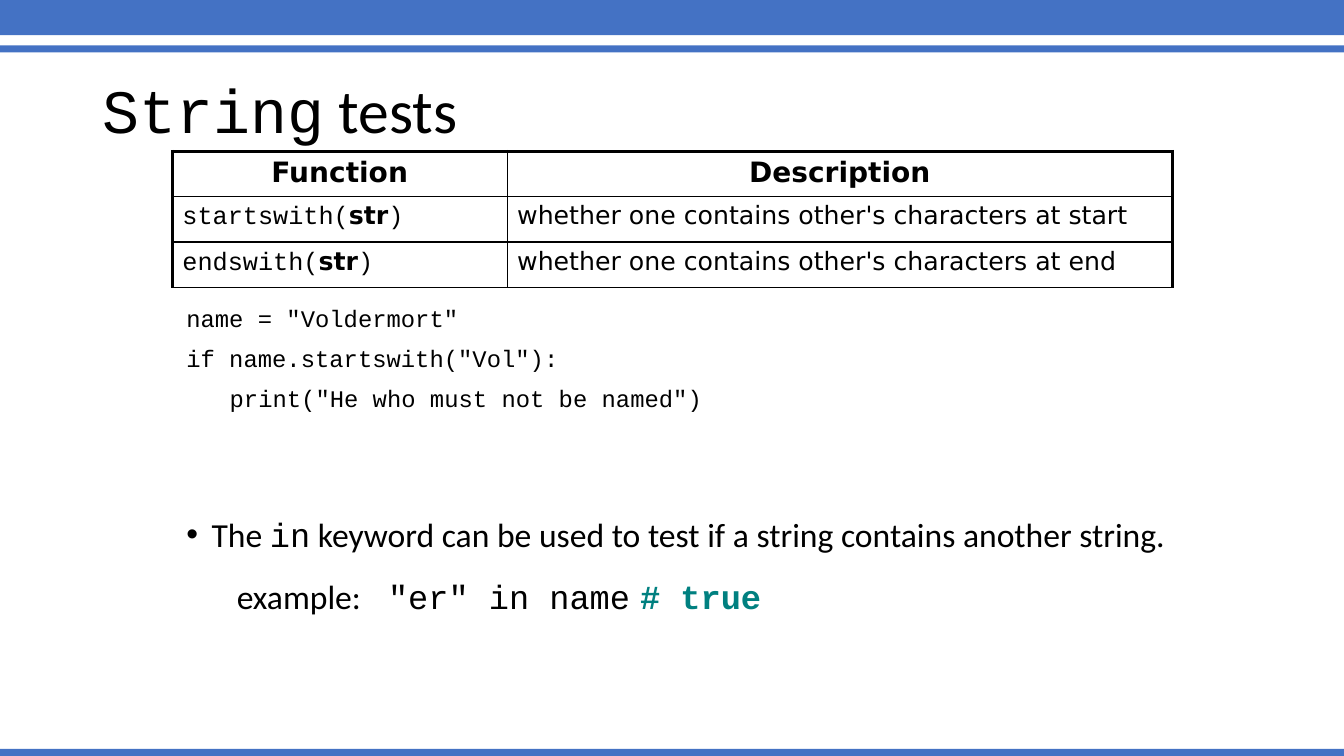
from lxml import etree
from pptx import Presentation
from pptx.dml.color import RGBColor
from pptx.enum.shapes import MSO_SHAPE
from pptx.enum.text import MSO_ANCHOR, PP_ALIGN
from pptx.oxml.ns import qn
from pptx.util import Inches, Pt

RECTANGLE = MSO_SHAPE.RECTANGLE
TOP, MIDDLE = MSO_ANCHOR.TOP, MSO_ANCHOR.MIDDLE
LEFT, CENTER = PP_ALIGN.LEFT, PP_ALIGN.CENTER
BLUE = RGBColor(0x44, 0x72, 0xC4)
BLACK = RGBColor(0, 0, 0)
TEAL = RGBColor(0, 0x80, 0x80)
SANS, MONO, TABLE_FONT = "Calibri", "Courier New", "DejaVu Sans"
PAGE_WIDTH, PAGE_HEIGHT = 13.33, 7.5
THIN, THICK = 1, 2.25


def add_spans(para, spans, size):
    for text, name, *extra in spans:
        span = para.add_run()
        span.text = text
        values = {"name": name, "size": Pt(size), "bold": False}
        color = BLACK
        if extra:
            values["bold"] = True
            color = extra[0]
        for key, value in values.items():
            setattr(span.font, key, value)
        span.font.color.rgb = color


def add_text(page, box, paragraphs, size, line_spacing, anchor=TOP):
    frame = page.shapes.add_textbox(*map(Inches, box)).text_frame
    frame.word_wrap = True
    frame.vertical_anchor = anchor
    paras = []
    for index, spans in enumerate(paragraphs):
        para = frame.add_paragraph() if index else frame.paragraphs[0]
        para.line_spacing = line_spacing
        para.space_before = Pt(10 if index else 0)
        add_spans(para, spans, size)
        paras.append(para)
    return paras


def set_indent(para, margin, hanging=0):
    properties = para._p.get_or_add_pPr()
    properties.set("marL", str(Inches(margin)))
    properties.set("indent", str(-Inches(hanging)))
    return properties


def add_bands(page):
    for top, height in ((-0.03, 0.38), (0.45, 0.07), (7.43, 0.07)):
        box = map(Inches, (0, top, PAGE_WIDTH, height))
        band = page.shapes.add_shape(RECTANGLE, *box)
        band.shadow.inherit = False
        band.fill.solid()
        band.fill.fore_color.rgb = BLUE
        band.line.fill.background()


def add_title(page, box):
    spans = [("String", MONO), (" tests", SANS)]
    add_text(page, box, [spans], 44, 0.9, MIDDLE)


def add_code(page, box):
    lines = ['name = "Voldermort"', 'if name.startswith("Vol"):',
             'print("He who must not be named")']
    paras = add_text(page, box, [[(line, MONO)] for line in lines], 17, 0.9)
    set_indent(paras[-1], 0.43)


def set_borders(cell, widths):
    properties = cell._tc.get_or_add_tcPr()
    for index, (side, width) in enumerate(widths.items()):
        line = etree.Element(qn("a:" + side), w=str(Pt(width)))
        fill = etree.SubElement(line, qn("a:solidFill"))
        etree.SubElement(fill, qn("a:srgbClr"), val=str(BLACK))
        properties.insert(index, line)


def add_function_table(page, box):
    rows = [[[("Function", TABLE_FONT, BLACK)],
             [("Description", TABLE_FONT, BLACK)]]]
    for name, place in (("startswith", "start"), ("endswith", "end")):
        call = [(name + "(", MONO), ("str", TABLE_FONT, BLACK), (")", MONO)]
        meaning = f"whether one contains other's characters at {place}"
        rows.append([call, [(meaning, TABLE_FONT)]])
    table = page.shapes.add_table(len(rows), 2, *map(Inches, box)).table
    for column, width in zip(table.columns, (3.32, box[2] - 3.32)):
        column.width = Inches(width)
    for row_index, row in enumerate(rows):
        header = row_index == 0
        for column_index, spans in enumerate(row):
            cell = table.cell(row_index, column_index)
            cell.fill.background()
            para = cell.text_frame.paragraphs[0]
            para.alignment = CENTER if header else LEFT
            add_spans(para, spans, 20 if header else 18)
            set_borders(cell, {
                "lnL": THIN if column_index else THICK,
                "lnR": THICK if column_index else THIN,
                "lnT": THICK if header else THIN,
                "lnB": THIN})


def add_keyword_note(page, box):
    sentence = [("The ", SANS), ("in", MONO),
                (" keyword can be used to test if a string contains"
                 " another string.", SANS)]
    example = [("\texample:\t", SANS), ('"er" in name\t', MONO),
               ("# true", MONO, TEAL)]
    bullet, sample = add_text(page, box, [sentence, example], 24, 1.2)
    properties = set_indent(bullet, 0.25, 0.25)
    etree.SubElement(properties, qn("a:buFont"), typeface="Arial")
    etree.SubElement(properties, qn("a:buChar"), char="•")
    stops = etree.SubElement(set_indent(sample, 0), qn("a:tabLst"))
    for position in (1, 2.54, 5.95):
        etree.SubElement(stops, qn("a:tab"), pos=str(Inches(position)), algn="l")


def main():
    deck = Presentation()
    deck.slide_width = Inches(PAGE_WIDTH)
    deck.slide_height = Inches(PAGE_HEIGHT)
    page = deck.slides.add_slide(deck.slide_layouts[6])
    add_bands(page)
    add_title(page, (0.92, 0.4, 11.5, 1.45))
    add_code(page, (1.75, 3, 9.83, 1.43))
    add_function_table(page, (1.71, 1.5, 9.92, 1.35))
    add_keyword_note(page, (1.75, 4.97, 10.22, 1.43))
    deck.save("out.pptx")


if __name__ == "__main__":
    main()
